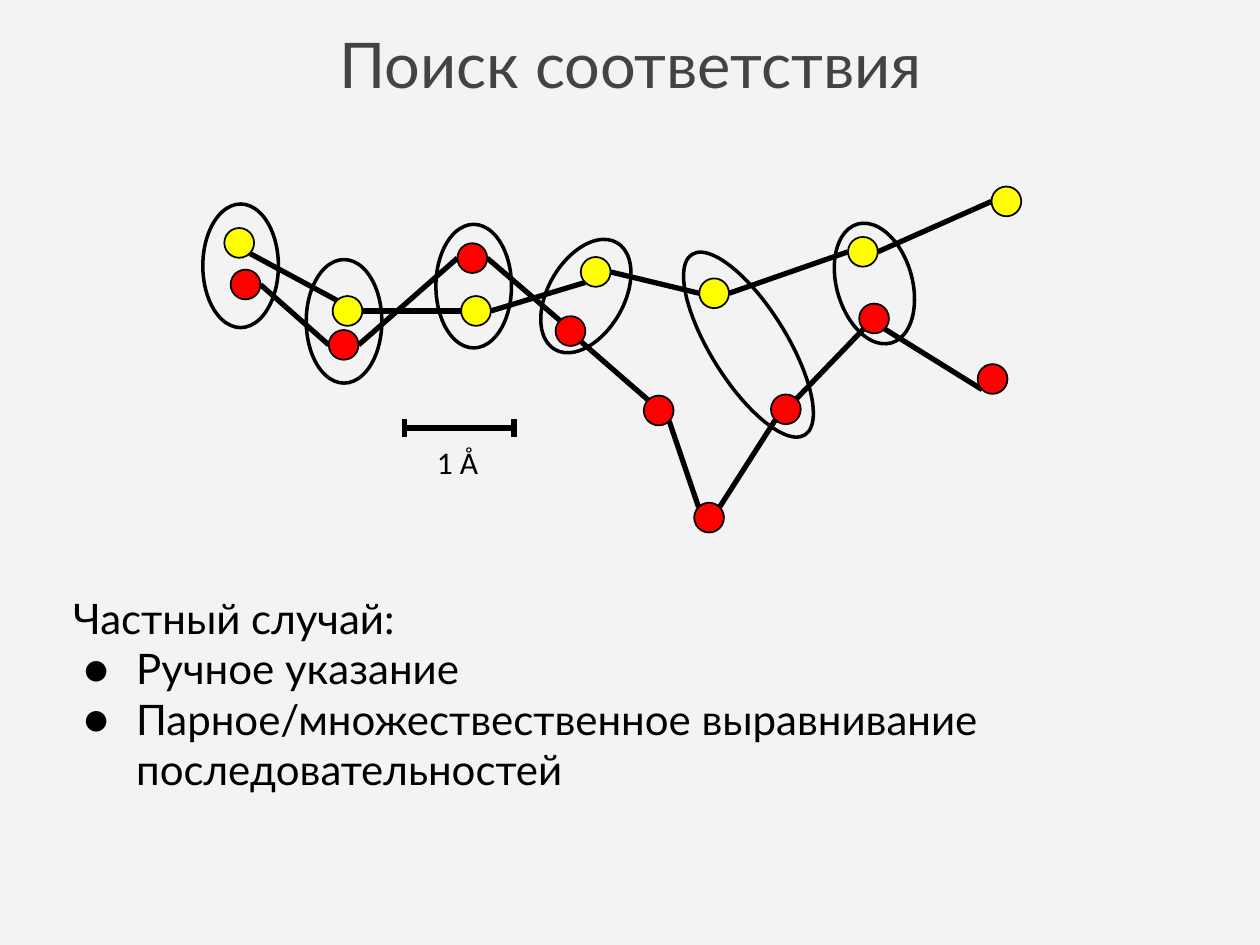
import math

import pptx
import pptx.util
import pptx.dml.color
import pptx.enum.shapes
import pptx.enum.text
import pptx.oxml
import pptx.oxml.ns

Pt = pptx.util.Pt
ALIGN = pptx.enum.text.PP_ALIGN
ANCHOR = pptx.enum.text.MSO_ANCHOR
OVAL = pptx.enum.shapes.MSO_SHAPE.OVAL
STRAIGHT = pptx.enum.shapes.MSO_CONNECTOR.STRAIGHT

TITLE = "Поиск соответствия"
INTRO = "Частный случай:"
CASES = ["Ручное указание", "Парное/множествественное выравнивание последовательностей"]

ATOM = 17
ANGLES = {"right": 0, "lower right": 45, "lower left": 135, "left": 180,
          "upper left": 225, "upper right": 315}
CHAINS = [
    {"color": "FFFF00",
     "atoms": [(128.2, 130.3), (190.1, 169.2), (263.5, 169.2), (331.9, 146.9),
               (399.6, 159.1), (484.6, 135.4), (566.6, 106.6)],
     "bonds": [("lower right", "upper left"), ("right", "left"), ("right", "lower left"),
               ("right", "left"), ("right", "left"), ("right", "left")]},
    {"color": "FF0000",
     "atoms": [(131.8, 154.1), (187.9, 188.6), (261.4, 139), (317.5, 180.7), (367.9, 226.1),
               (396.7, 287.3), (440.6, 225.4), (491, 173.5), (558.7, 208.1)],
     "bonds": [("right", "left"), ("right", "left"), ("right", "upper left"),
               ("lower right", "upper left"), ("lower right", "upper left"),
               ("upper right", "lower left"), ("upper right", "lower left"),
               ("lower right", "lower left")]},
]
MATCH_WIDTH = 43.2
MATCHES = [(115.9, 116.6, 70.6, 0), (175, 148.3, 70.6, 0), (249.1, 128.2, 70.6, 0),
           (313.2, 133.9, 70.6, 30.2), (406.1, 136.1, 121.7, 328), (478.1, 126.7, 70.6, 344.1)]
SCALE_LEFT, SCALE_RIGHT, SCALE_Y, TICK = 231, 293.8, 244.6, 5.4


def rgb(value):
    return pptx.dml.color.RGBColor.from_string(value)


def set_font(paragraph, name, size, color):
    paragraph.font.name = name
    paragraph.font.size = Pt(size)
    paragraph.font.color.rgb = rgb(color)


def place(shape, left, top, width, height):
    shape.left, shape.top, shape.width, shape.height = Pt(left), Pt(top), Pt(width), Pt(height)


def add_oval(group, left, top, width, height, line_width, fill=None, rotation=0):
    shape = group.shapes.add_shape(OVAL, Pt(left), Pt(top), Pt(width), Pt(height))
    shape.shadow.inherit = False
    shape.rotation = rotation
    if fill:
        shape.fill.solid()
        shape.fill.fore_color.rgb = rgb(fill)
    else:
        shape.fill.background()
    shape.line.color.rgb = rgb("000000")
    shape.line.width = Pt(line_width)


def add_line(group, start, end):
    connector = group.shapes.add_connector(STRAIGHT, *(Pt(value) for value in start + end))
    connector.line.color.rgb = rgb("000000")
    connector.line.width = Pt(3)
    properties = connector._element.spPr
    properties.append(properties.makeelement(pptx.oxml.ns.qn("a:effectLst"), {}))


def rim_point(atom, side):
    angle = math.radians(ANGLES[side])
    radius = ATOM / 2
    return (atom[0] + radius * (1 + math.cos(angle)), atom[1] + radius * (1 + math.sin(angle)))


def add_bullet(paragraph):
    properties = paragraph._p.get_or_add_pPr()
    properties.set("marL", str(Pt(36)))
    properties.set("indent", str(Pt(-30)))
    namespace = pptx.oxml.ns.nsdecls("a")
    for xml in (f'<a:buClr {namespace}><a:srgbClr val="000000"/></a:buClr>',
                f'<a:buFont {namespace} typeface="Lato"/>',
                f'<a:buChar {namespace} char="●"/>'):
        properties.append(pptx.oxml.parse_xml(xml))


def add_title(slide):
    title = slide.shapes.title
    place(title, 64.8, 18, 591.1, 43.2)
    frame = title.text_frame
    frame.text = TITLE
    frame.auto_size = pptx.enum.text.MSO_AUTO_SIZE.NONE
    frame.vertical_anchor = ANCHOR.BOTTOM
    frame.paragraphs[0].alignment = ALIGN.CENTER
    set_font(frame.paragraphs[0], "Lato", 36, "434343")


def add_body(slide):
    body = slide.placeholders[1]
    place(body, 34.6, 331.2, 673.2, 175)
    frame = body.text_frame
    frame.auto_size = pptx.enum.text.MSO_AUTO_SIZE.NONE
    frame.vertical_anchor = ANCHOR.TOP
    frame.margin_left = frame.margin_right = frame.margin_top = frame.margin_bottom = Pt(7.2)
    frame.text = "\n".join([INTRO] + CASES)
    for index, paragraph in enumerate(frame.paragraphs):
        if index:
            add_bullet(paragraph)
        paragraph.alignment = ALIGN.LEFT
        paragraph.space_before = Pt(0)
        set_font(paragraph, "Lato", 24, "000000")


def add_chain(group, chain):
    atoms = chain["atoms"]
    for start, end, (start_side, end_side) in zip(atoms, atoms[1:], chain["bonds"]):
        add_line(group, rim_point(start, start_side), rim_point(end, end_side))
    for left, top in atoms:
        add_oval(group, left, top, ATOM, ATOM, 1, chain["color"])


def add_scale(group):
    add_line(group, (SCALE_LEFT - 1.3, SCALE_Y), (SCALE_RIGHT, SCALE_Y))
    for x in (SCALE_LEFT, SCALE_RIGHT):
        add_line(group, (x, SCALE_Y - TICK), (x, SCALE_Y + TICK))
    label = group.shapes.add_textbox(Pt(242.6), Pt(249.8), Pt(38.2), Pt(28.8))
    label.text_frame.word_wrap = False
    label.text_frame.text = "1 Å"
    set_font(label.text_frame.paragraphs[0], "Calibri", 18, "000000")


def main():
    presentation = pptx.Presentation()
    presentation.slide_width, presentation.slide_height = Pt(720), Pt(540)
    slide = presentation.slides.add_slide(presentation.slide_layouts[0])
    slide.background.fill.solid()
    slide.background.fill.fore_color.rgb = rgb("F3F3F3")
    add_title(slide)
    group = slide.shapes.add_group_shape()
    for chain in CHAINS:
        add_chain(group, chain)
    add_scale(group)
    for left, top, height, rotation in MATCHES:
        add_oval(group, left, top, MATCH_WIDTH, height, 2, rotation=rotation)
    add_body(slide)
    presentation.save("out.pptx")


if __name__ == "__main__":
    main()
